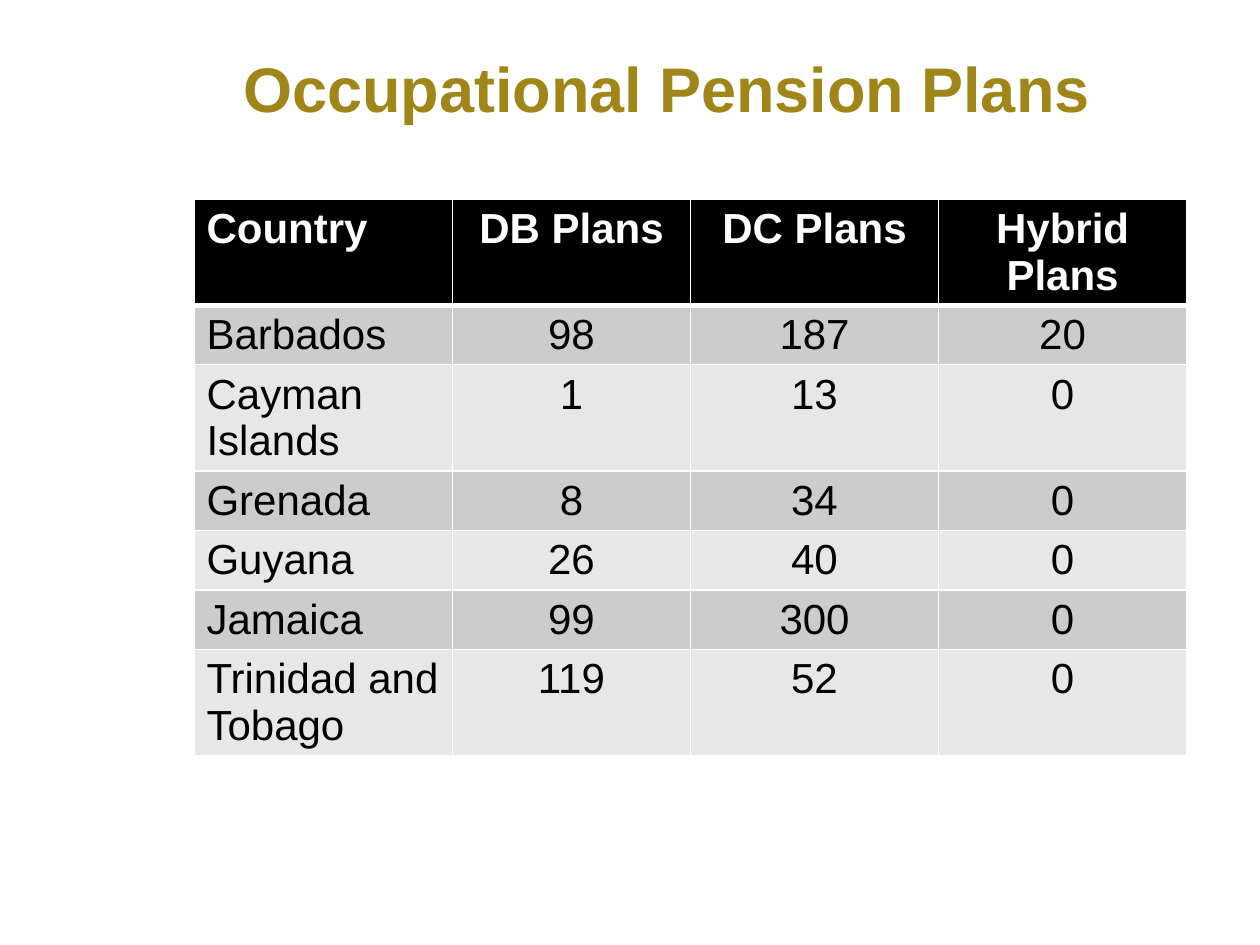
from lxml.etree import SubElement
from pptx import Presentation
from pptx.dml.color import RGBColor
from pptx.enum.text import MSO_ANCHOR as Anchor, MSO_AUTO_SIZE as AutoSize, PP_ALIGN as Align
from pptx.oxml.ns import qn
from pptx.util import Cm, Pt

GOLD, WHITE, BLACK = "A08518", "FFFFFF", "000000"
BANDS = ("CCCCCC", "E7E7E7")
COLUMN_WIDTHS = (5.21, 4.8, 5, 5)
ROW_HEIGHT = 1.04
PENSION_PLANS = (
    ("Country", "DB Plans", "DC Plans", "Hybrid Plans"),
    ("Barbados", 98, 187, 20),
    ("Cayman Islands", 1, 13, 0),
    ("Grenada", 8, 34, 0),
    ("Guyana", 26, 40, 0),
    ("Jamaica", 99, 300, 0),
    ("Trinidad and Tobago", 119, 52, 0),
)


def color(value):
    return RGBColor.from_string(value)


def write(frame, text, size=24, fill=BLACK, bold=False, align=Align.LEFT):
    para = frame.paragraphs[0]
    para.alignment = align
    span = para.add_run()
    span.text = text
    font = span.font
    font.name, font.size, font.bold = "Arial", Pt(size), bold
    font.color.rgb = color(fill)


def add_borders(cell, bottom):
    """Draw white cell edges; call this before filling the cell."""
    properties = cell._tc.get_or_add_tcPr()
    for side, width in (("L", 1), ("R", 1), ("T", 1), ("B", bottom)):
        line = SubElement(properties, qn(f"a:ln{side}"), w=str(Pt(width)))
        SubElement(SubElement(line, qn("a:solidFill")), qn("a:srgbClr"), val=WHITE)


def add_title(page, text):
    title = page.shapes.title
    title.left, title.top, title.width, title.height = Cm(4.65), Cm(0.33), Cm(19.25), Cm(2.84)
    frame = title.text_frame
    frame.auto_size = AutoSize.NONE
    frame.vertical_anchor = Anchor.MIDDLE
    write(frame, text, size=36, fill=GOLD, bold=True)


def add_plan_table(page, rows):
    table = page.shapes.add_table(
        len(rows), len(COLUMN_WIDTHS), Cm(3.91), Cm(4.01),
        Cm(sum(COLUMN_WIDTHS)), Cm(ROW_HEIGHT * len(rows))).table
    for column, width in zip(table.columns, COLUMN_WIDTHS):
        column.width = Cm(width)
    for row_index, values in enumerate(rows):
        header = row_index == 0
        table.rows[row_index].height = Cm(ROW_HEIGHT)
        for column_index, value in enumerate(values):
            cell = table.cell(row_index, column_index)
            add_borders(cell, bottom=3 if header else 1)
            cell.fill.solid()
            cell.fill.fore_color.rgb = color(BLACK if header else BANDS[(row_index - 1) % 2])
            write(cell.text_frame, str(value), fill=WHITE if header else BLACK,
                  bold=header, align=Align.CENTER if column_index else Align.LEFT)


def main():
    deck = Presentation()
    deck.slide_width, deck.slide_height = Cm(25.4), Cm(19.05)
    page = deck.slides.add_slide(deck.slide_layouts[5])
    # Heading
    add_title(page, "Occupational Pension Plans")
    # Number of plans by country
    add_plan_table(page, PENSION_PLANS)
    deck.save("out.pptx")


if __name__ == "__main__":
    main()
